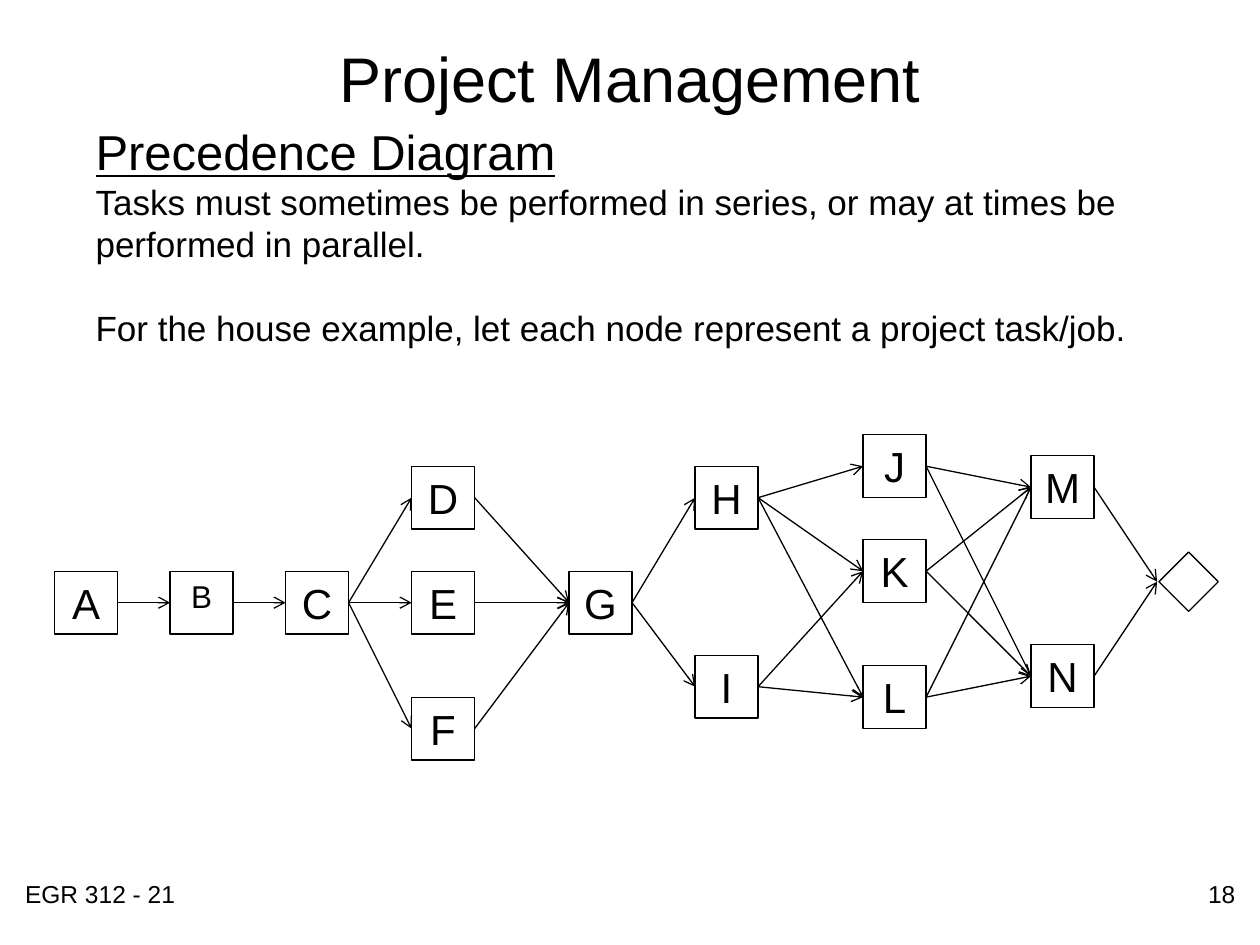
"""Build a project management slide with a precedence diagram."""
from lxml import etree
from pptx import Presentation
from pptx.dml.color import RGBColor
from pptx.enum.shapes import MSO_CONNECTOR, MSO_SHAPE
from pptx.enum.text import MSO_ANCHOR, PP_ALIGN
from pptx.oxml.ns import qn
from pptx.util import Pt

BLACK = RGBColor(0, 0, 0)
WHITE = RGBColor(255, 255, 255)
LEFT, CENTER, RIGHT = PP_ALIGN.LEFT, PP_ALIGN.CENTER, PP_ALIGN.RIGHT
TOP, MIDDLE = MSO_ANCHOR.TOP, MSO_ANCHOR.MIDDLE
RECT, STRAIGHT = MSO_SHAPE.RECTANGLE, MSO_CONNECTOR.STRAIGHT
LEFT_SIDE, RIGHT_SIDE = 1, 3
NODE_SIZE = 36
LINE_WIDTH = 0.75

COLUMNS = [
    (31.2, {"A": 326.4}),
    (97.2, {"B": 326.4}),
    (163.2, {"C": 326.4}),
    (235.2, {"D": 266.4, "E": 326.4, "F": 398.4}),
    (325.2, {"G": 326.4}),
    (397.2, {"H": 266.4, "I": 374.4}),
    (493.2, {"J": 248.4, "K": 308.4, "L": 380.4}),
    (589.2, {"M": 260.4, "N": 368.4}),
]
SUCCESSORS = {
    "A": "B", "B": "C", "C": "DEF", "D": "G", "E": "G", "F": "G", "G": "HI",
    "H": "JKL", "I": "KL", "J": "MN", "K": "MN", "L": "MN",
}
FINISH_BOX = (667.2, 320.4, 24, 24)
FINISH_TIP = (661.2, 332.4)

BODY = [
    ("Precedence Diagram", {"size": Pt(28), "underline": True}, 0),
    ("Tasks must sometimes be performed in series, or may at times be "
     "performed in parallel.", {"size": Pt(20)}, 0),
    ("For the house example, let each node represent a project task/job.",
     {"size": Pt(20)}, 24),
]


def write_paragraph(p, text, font, align=LEFT, before=0):
    """Fill a paragraph with one formatted run."""
    p.alignment = align
    p.space_before = Pt(before)
    r = p.add_run()
    r.text = text
    r.font.color.rgb = BLACK
    for name, value in {"name": "Arial", **font}.items():
        setattr(r.font, name, value)


def add_text(s, box, paragraphs, align=LEFT, anchor=TOP):
    """Add a wrapped text box with one or more paragraphs."""
    tf = s.shapes.add_textbox(*map(Pt, box)).text_frame
    tf.word_wrap = True
    tf.vertical_anchor = anchor
    for i, (text, font, before) in enumerate(paragraphs):
        p = tf.add_paragraph() if i else tf.paragraphs[0]
        write_paragraph(p, text, font, align, before)


def add_box(s, box):
    """Add a white rectangle with a thin black outline."""
    sp = s.shapes.add_shape(RECT, *map(Pt, box))
    sp.shadow.inherit = False
    sp.fill.solid()
    sp.fill.fore_color.rgb = WHITE
    sp.line.color.rgb = BLACK
    sp.line.width = Pt(LINE_WIDTH)
    return sp


def add_node(s, label, x, y):
    """Add a task box with its letter."""
    sp = add_box(s, (x, y, NODE_SIZE, NODE_SIZE))
    tf = sp.text_frame
    tf.vertical_anchor = TOP
    size = 18 if label == "B" else 24
    write_paragraph(tf.paragraphs[0], label, {"size": Pt(size)}, CENTER, size / 8)
    return sp


def add_arrow(s, source, target=None):
    """Add an arrow from a task to another task or to the finish."""
    line = s.shapes.add_connector(STRAIGHT, 0, 0, *map(Pt, FINISH_TIP))
    line.begin_connect(source, RIGHT_SIDE)
    if target is not None:
        line.end_connect(target, LEFT_SIDE)
    line.line.color.rgb = BLACK
    line.line.width = Pt(LINE_WIDTH)
    sp_pr = line.element.spPr
    etree.SubElement(sp_pr.find(qn("a:ln")), qn("a:tailEnd"), type="arrow")
    etree.SubElement(sp_pr, qn("a:effectLst"))


def add_diagram(s):
    """Add all tasks, the finish diamond and the arrows."""
    nodes = {label: add_node(s, label, x, y)
             for x, column in COLUMNS for label, y in column.items()}
    add_box(s, FINISH_BOX).rotation = 45
    for source, targets in SUCCESSORS.items():
        for target in targets:
            add_arrow(s, nodes[source], nodes[target])
    for last in "MN":
        add_arrow(s, nodes[last])


def main():
    """Build and save the slide."""
    prs = Presentation()
    prs.slide_width, prs.slide_height = Pt(720), Pt(540)
    s = prs.slides.add_slide(prs.slide_layouts[6])
    small = {"size": Pt(14)}
    add_text(s, (7.2, 499, 168, 37.5), [("EGR 312 - 21", small, 0)])
    add_text(s, (545, 499, 168, 37.5), [("18", small, 0)], RIGHT)
    add_text(s, (54, 16, 612, 56),
             [("Project Management", {"size": Pt(36)}, 0)], CENTER, MIDDLE)
    add_text(s, (47.5, 66, 625, 356), BODY)
    add_diagram(s)
    prs.save("out.pptx")


if __name__ == "__main__":
    main()
